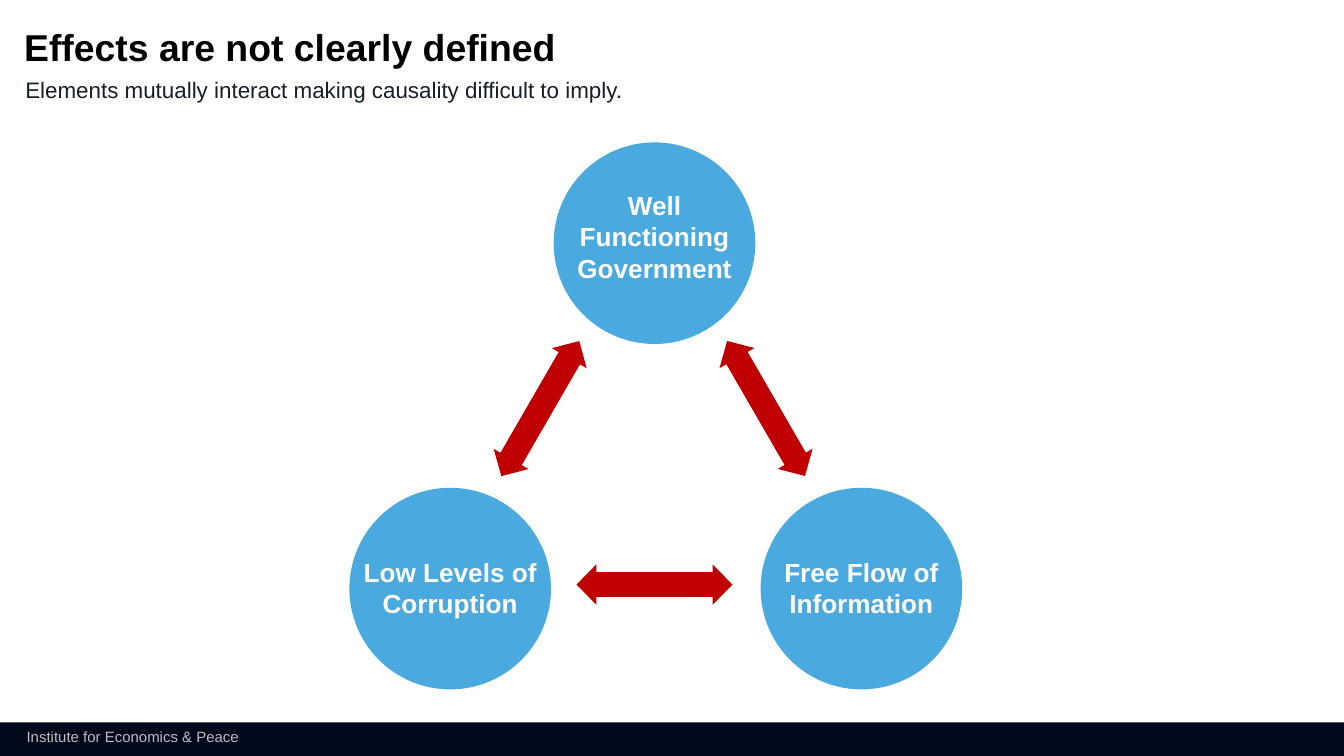
from dataclasses import dataclass

from pptx import Presentation
from pptx.dml.color import RGBColor
from pptx.enum import shapes, text
from pptx.util import Inches, Pt


@dataclass(frozen=True)
class Theme:
    font: str = "Arial"
    navy: str = "00081C"
    grey: str = "BFBFBF"
    ink: str = "171E28"
    black: str = "000000"
    white: str = "FFFFFF"
    blue: str = "4AA9DF"
    red: str = "C00000"
    title: int = 20
    subtitle: int = 12
    label: int = 14
    footer: int = 8


T = Theme()
SHAPE = shapes.MSO_SHAPE
WIDTH = 10
HEIGHT = WIDTH * 9 / 16


def add_filled(parent, kind, box, color):
    sp = parent.add_shape(kind, *map(Inches, box))
    sp.shadow.inherit = False
    sp.fill.solid()
    sp.fill.fore_color.rgb = RGBColor.from_string(color)
    sp.line.fill.background()
    return sp


def add_text(parent, box, words, size, color, bold=False, align=text.PP_ALIGN.LEFT, inset=None):
    tf = parent.add_textbox(*map(Inches, box)).text_frame
    tf.word_wrap = True
    if inset is not None:
        tf.margin_left = tf.margin_right = tf.margin_top = tf.margin_bottom = Inches(inset)
    p = tf.paragraphs[0]
    p.alignment = align
    r = p.add_run()
    r.text = words
    r.font.name, r.font.size, r.font.bold = T.font, Pt(size), bold
    r.font.color.rgb = RGBColor.from_string(color)
    return p


def footer(s, box):
    x, y, w, h = box
    add_filled(s.shapes, SHAPE.RECTANGLE, box, T.navy)
    add_text(s.shapes, (x + 0.1, y - 0.01, 1.8, h - 0.01), "Institute for Economics & Peace",
             T.footer, T.grey)


def heading(s, box):
    x, y, w, h = box
    add_text(s.shapes, (x, y + 0.3, w, 0.3),
             "Elements mutually interact making causality difficult to imply.",
             T.subtitle, T.ink)
    p = add_text(s.shapes, (x + 0.09, y, w - 0.1, 0.3), "Effects are not clearly defined",
                 T.title, T.black, bold=True, inset=0)
    p.line_spacing = 0.9


def arrows(s, box):
    """Three two-way arrows along the sides of the triangle."""
    x, y, w, h = box
    length, thick = 1.16, 0.3
    group = s.shapes.add_group_shape().shapes
    for dx, dy, angle in [(2.52, 1.83, 60), (0.84, 1.83, 300), (1.69, 3.14, 0)]:
        sp = add_filled(group, SHAPE.LEFT_RIGHT_ARROW, (x + dx, y + dy, length, thick), T.red)
        sp.adjustments[0], sp.adjustments[1] = 0.61, 0.49
        sp.rotation = angle


def node(s, box, words, label_top, label_height):
    x, y, w, h = box
    group = s.shapes.add_group_shape().shapes
    add_filled(group, SHAPE.OVAL, box, T.blue)
    add_text(group, (x, y + label_top, w, label_height), words, T.label, T.white,
             bold=True, align=text.PP_ALIGN.CENTER)


def triangle(s, box):
    x, y, w, h = box
    d = 1.5
    arrows(s, box)
    # One node on top, two at the bottom corners
    node(s, (x + 1.52, y, d, d), "Well Functioning Government", 0.3, 0.81)
    for left, words in [(x + w - d, "Free Flow of Information"),
                        (x, "Low Levels of Corruption")]:
        node(s, (left, y + h - d, d, d), words, 0.46, 0.57)


def main():
    prs = Presentation()
    prs.slide_width, prs.slide_height = Inches(WIDTH), Inches(HEIGHT)
    s = prs.slides.add_slide(prs.slide_layouts[6])
    footer(s, (0, HEIGHT - 0.25, WIDTH, 0.25))
    heading(s, (0.09, 0.22, 4.93, 0.6))
    triangle(s, (2.6, 1.06, 4.56, 4.07))
    prs.save("out.pptx")


if __name__ == "__main__":
    main()
